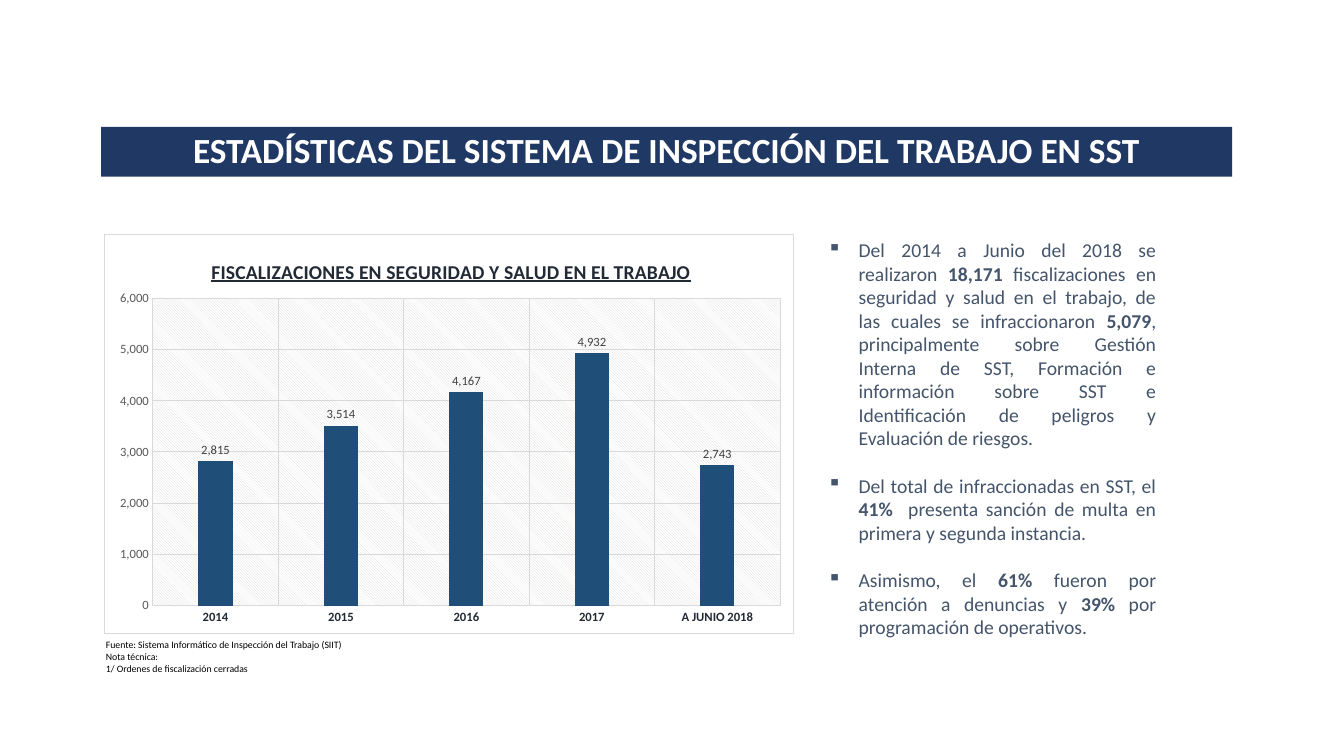
from lxml.etree import SubElement
from pptx import Presentation
from pptx.chart.data import CategoryChartData
from pptx.dml.color import RGBColor
from pptx.enum.chart import XL_CHART_TYPE, XL_LABEL_POSITION, XL_TICK_MARK
from pptx.enum.dml import MSO_PATTERN
from pptx.enum.shapes import MSO_SHAPE
from pptx.enum.text import MSO_ANCHOR, PP_ALIGN
from pptx.oxml import parse_xml
from pptx.oxml.ns import nsdecls, qn
from pptx.util import Cm, Pt

NAVY = RGBColor(0x20, 0x38, 0x64)
BLUE = RGBColor(0x1F, 0x4E, 0x79)
SLATE = RGBColor(0x44, 0x54, 0x6A)
INK = RGBColor(0x22, 0x2A, 0x35)
DARK_GRAY = RGBColor(0x40, 0x40, 0x40)
GRAY = RGBColor(0x59, 0x59, 0x59)
LIGHT_GRAY = RGBColor(0xD9, 0xD9, 0xD9)
WHITE = RGBColor(0xFF, 0xFF, 0xFF)
BLACK = RGBColor(0, 0, 0)

HEADING = "ESTADÍSTICAS DEL SISTEMA DE INSPECCIÓN DEL TRABAJO EN SST"
CHART_TITLE = "FISCALIZACIONES EN SEGURIDAD Y SALUD EN EL TRABAJO"
INSPECTIONS = {"2014": 2815, "2015": 3514, "2016": 4167, "2017": 4932, "A JUNIO 2018": 2743}
SOURCE_NOTES = [
    "Fuente: Sistema Informático de Inspección del Trabajo (SIIT)",
    "Nota técnica:",
    "1/ Ordenes de fiscalización cerradas",
]
FINDINGS = [
    [("Del 2014 a Junio del 2018 se realizaron ", False), ("18,171", True),
     (" fiscalizaciones en seguridad y salud en el trabajo, de las cuales se infraccionaron ", False),
     ("5,079", True),
     (", principalmente sobre Gestión Interna de SST, Formación e información sobre SST "
      "e Identificación de peligros y Evaluación de riesgos.", False)],
    [("Del total de infraccionadas en SST, el ", False), ("41%  ", True),
     ("presenta sanción de multa en primera y segunda instancia.", False)],
    [("Asimismo, el ", False), ("61%", True), (" fueron por atención a denuncias y ", False),
     ("39%", True), (" por programación de operativos.", False)],
]


def apply_format(target, values):
    for name, value in values.items():
        setattr(target, name, value)


class SlideBuilder:
    font_name = "Calibri"
    number_format = "#,##0"

    def __init__(self, slide):
        self.slide = slide

    def style_font(self, font, size, color, **extra):
        apply_format(font, {"name": self.font_name, "size": Pt(size), **extra})
        font.color.rgb = color

    def style_line(self, line):
        line.color.rgb = LIGHT_GRAY
        line.width = Pt(0.75)

    def add_banner(self, text, box):
        banner = self.slide.shapes.add_shape(MSO_SHAPE.RECTANGLE, *box)
        banner.shadow.inherit = False
        banner.fill.solid()
        banner.fill.fore_color.rgb = NAVY
        banner.line.fill.background()
        banner.text_frame.vertical_anchor = MSO_ANCHOR.MIDDLE
        heading = banner.text_frame.paragraphs[0]
        apply_format(heading, {"alignment": PP_ALIGN.CENTER, "line_spacing": 0.9})
        run = heading.add_run()
        run.text = text
        self.style_font(run.font, 25.2, WHITE, bold=True)

    def add_text(self, paragraphs, box, size, color, wrap=True, bullet=None):
        frame = self.slide.shapes.add_textbox(*box).text_frame
        frame.word_wrap = wrap
        for index, runs in enumerate(paragraphs):
            paragraph = frame.paragraphs[0] if index == 0 else frame.add_paragraph()
            if bullet:
                paragraph.alignment = PP_ALIGN.JUSTIFY
                if index:
                    paragraph.space_before = Pt(17)
                properties = paragraph._p.get_or_add_pPr()
                properties.set("marL", str(Cm(0.79)))
                properties.set("indent", str(Cm(-0.79)))
                SubElement(properties, qn("a:buChar")).set("char", bullet)
            for text, bold in runs:
                run = paragraph.add_run()
                run.text = text
                self.style_font(run.font, size, color, bold=bold)

    def place_part(self, part, index, **fractions):
        for layout in part.findall(qn("c:layout")):
            part.remove(layout)
        layout = parse_xml(f"<c:layout {nsdecls('c')}/>")
        manual = SubElement(layout, qn("c:manualLayout"))
        if "w" in fractions:
            SubElement(manual, qn("c:layoutTarget")).set("val", "inner")
        for mode in ("xMode", "yMode"):
            SubElement(manual, qn(f"c:{mode}")).set("val", "edge")
        for name, value in fractions.items():
            SubElement(manual, qn(f"c:{name}")).set("val", str(value))
        part.insert(index, layout)

    def fill_chart_areas(self, chart):
        border = (f'<a:ln w="{Pt(0.75)}"><a:solidFill><a:srgbClr val="{LIGHT_GRAY}"/>'
                  '</a:solidFill></a:ln>')
        white = f'<a:srgbClr val="{WHITE}"/>'
        pattern = (f'<a:pattFill prst="{MSO_PATTERN.to_xml(MSO_PATTERN.LIGHT_DOWNWARD_DIAGONAL)}">'
                   f'<a:fgClr><a:srgbClr val="{LIGHT_GRAY}"/></a:fgClr>'
                   f'<a:bgClr>{white}</a:bgClr></a:pattFill><a:ln><a:noFill/></a:ln>')
        wrapper = "<c:spPr " + nsdecls("c", "a") + ">{}</c:spPr>"
        root = chart._chartSpace.chart
        root.plotArea.append(parse_xml(wrapper.format(pattern)))
        root.addnext(parse_xml(wrapper.format(f"<a:solidFill>{white}</a:solidFill>{border}")))

    def add_column_chart(self, title, values, box):
        data = CategoryChartData(number_format=self.number_format)
        data.categories = list(values)
        data.add_series("Fiscalizaciones", list(values.values()))
        chart = self.slide.shapes.add_chart(XL_CHART_TYPE.COLUMN_CLUSTERED, *box, data).chart
        self.style_font(chart.font, 10, BLACK)
        chart.has_legend = False

        heading = chart.chart_title.text_frame.paragraphs[0].add_run()
        heading.text = title
        self.style_font(heading.font, 14, INK, bold=True, underline=True)
        chart.chart_title.include_in_layout = False

        for axis, color, bold in ((chart.category_axis, INK, True), (chart.value_axis, GRAY, False)):
            apply_format(axis, {"has_major_gridlines": True,
                                "major_tick_mark": XL_TICK_MARK.NONE,
                                "minor_tick_mark": XL_TICK_MARK.NONE})
            self.style_line(axis.major_gridlines.format.line)
            self.style_font(axis.tick_labels.font, 9, color, bold=bold)
        self.style_line(chart.category_axis.format.line)
        chart.value_axis.format.line.fill.background()
        apply_format(chart.value_axis, {"minimum_scale": 0, "maximum_scale": 6000, "major_unit": 1000})
        number_style = {"number_format": self.number_format, "number_format_is_linked": False}
        apply_format(chart.value_axis.tick_labels, number_style)

        plot = chart.plots[0]
        apply_format(plot, {"gap_width": 267, "overlap": -43,
                            "vary_by_categories": False, "has_data_labels": True})
        column_fill = plot.series[0].format.fill
        column_fill.solid()
        column_fill.fore_color.rgb = BLUE
        apply_format(plot.data_labels, {"show_value": True,
                                        "position": XL_LABEL_POSITION.OUTSIDE_END, **number_style})
        self.style_font(plot.data_labels.font, 9, DARK_GRAY)

        self.fill_chart_areas(chart)
        root = chart._chartSpace.chart
        self.place_part(root.plotArea, 0, x=0.07, y=0.16, w=0.91, h=0.77)
        self.place_part(root.find(qn("c:title")), 1, x=0.15, y=0.05)


def main():
    presentation = Presentation()
    apply_format(presentation, {"slide_width": Cm(33.87), "slide_height": Cm(19.05)})
    builder = SlideBuilder(presentation.slides.add_slide(presentation.slide_layouts[6]))
    builder.add_banner(HEADING, (Cm(2.55), Cm(3.2), Cm(28.5), Cm(1.25)))
    builder.add_text([[(note, False)] for note in SOURCE_NOTES],
                     (Cm(2.42), Cm(15.98), Cm(6.6), Cm(1.14)), 7, BLACK, wrap=False)
    builder.add_column_chart(CHART_TITLE, INSPECTIONS, (Cm(2.62), Cm(5.9), Cm(17.4), Cm(10.08)))
    builder.add_text(FINDINGS, (Cm(20.6), Cm(5.87), Cm(8.79), Cm(11.02)), 14, SLATE, bullet="▪")
    presentation.save("out.pptx")


if __name__ == "__main__":
    main()
